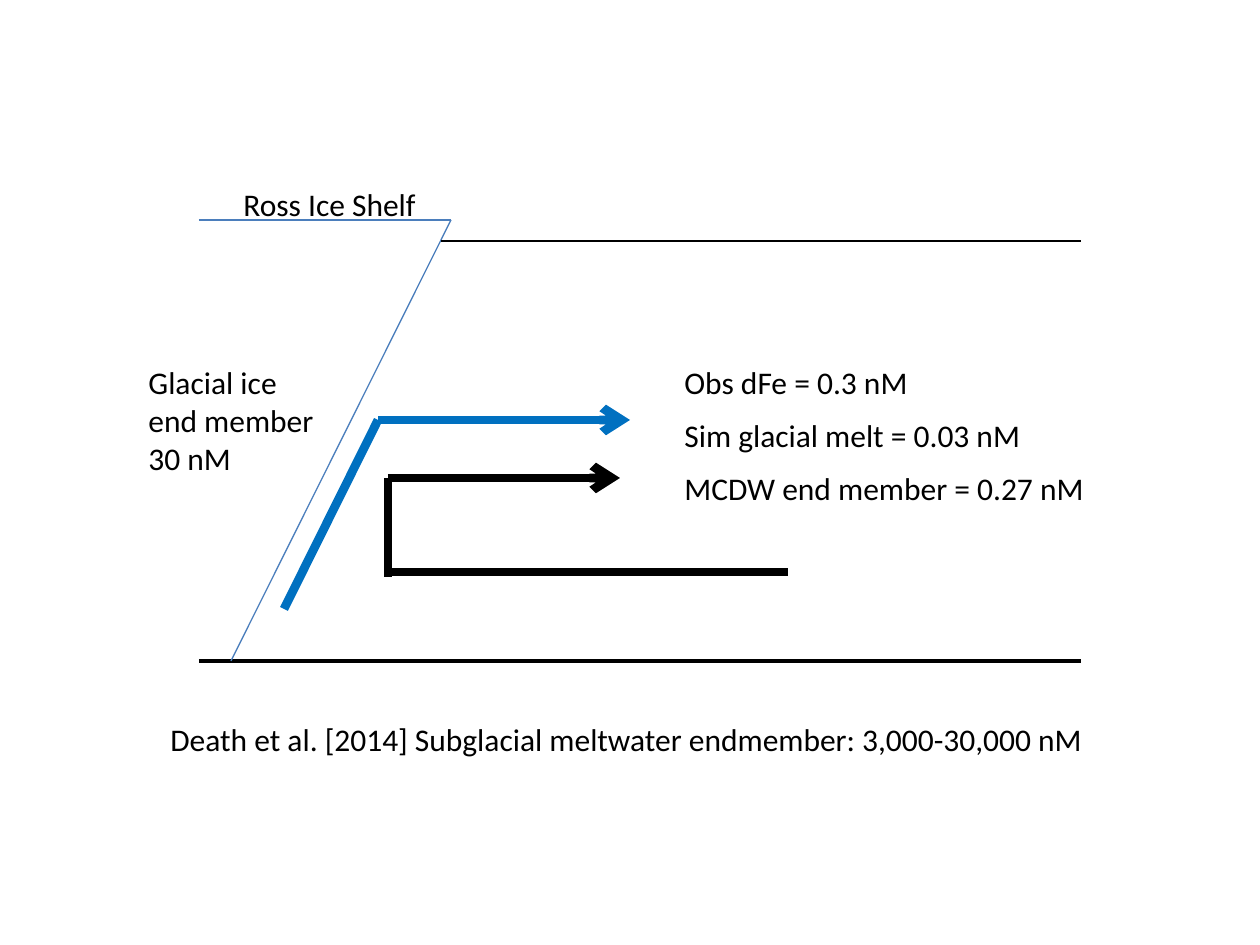
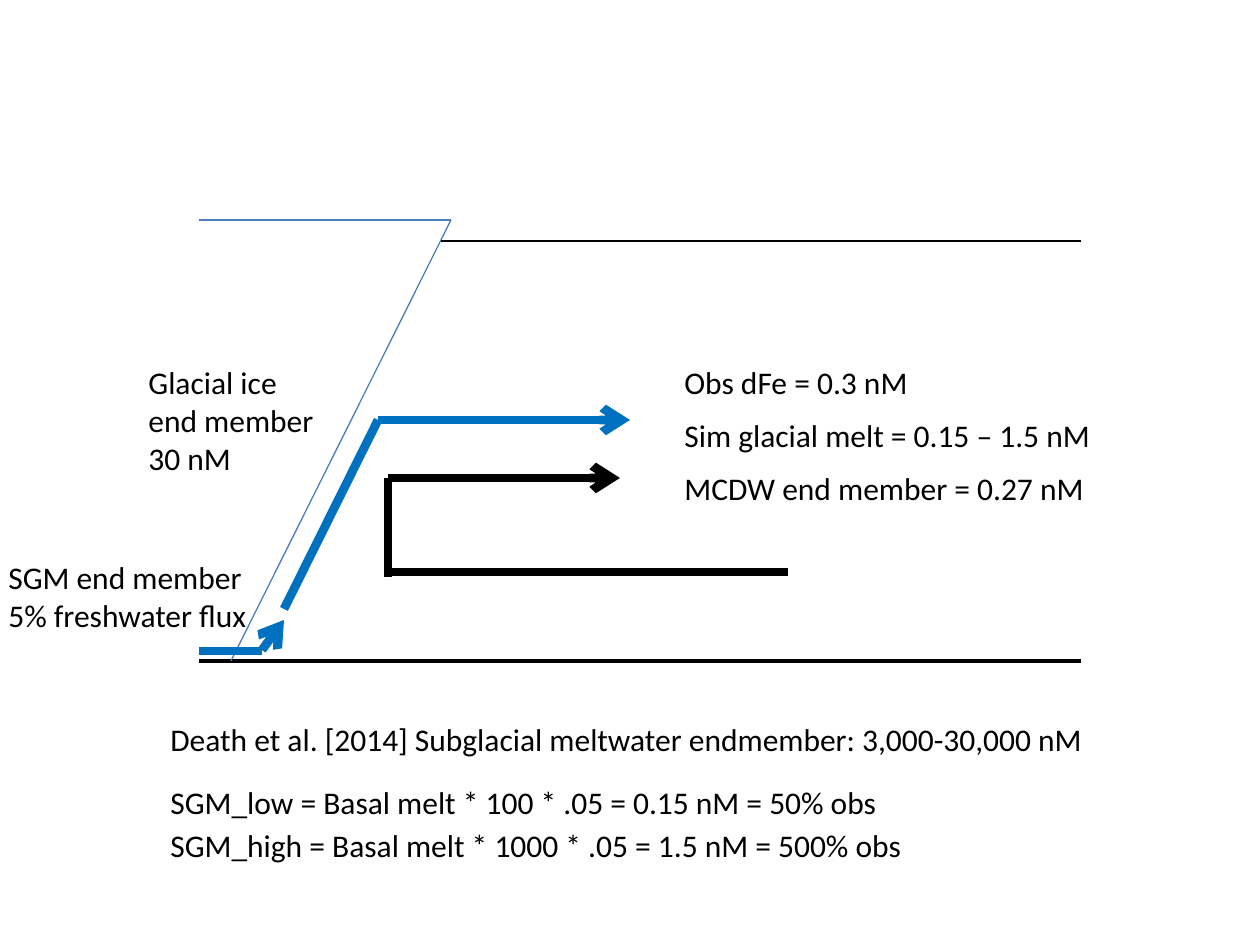
from pptx import Presentation
from pptx.dml.color import RGBColor
from pptx.enum.shapes import MSO_CONNECTOR
from pptx.enum.text import MSO_AUTO_SIZE
from pptx.oxml.ns import qn
from pptx.util import Pt
from lxml.etree import SubElement

PX = 914400 / 126
BLACK, ICE, MELT = "000000", "4B7EBC", "0070C0"
FONT = {"name": "Calibri", "size": Pt(18)}
THIN, BED, FLOW = 0.75, 2, 5
LINE_H, PAD = 38, 13
READING_X, READING_Y, READING_W, READING_STEP = 672, 357, (252, 365, 430), 53

SHARED_LINES = [
    ((199, 661), (1081, 661), BLACK, BED, False),
    ((231, 661), (451, 220), ICE, THIN, False),
    ((199, 220), (451, 220), ICE, THIN, False),
    ((441, 241), (1081, 241), BLACK, THIN, False),
    ((284, 609), (378, 420), MELT, FLOW, False),
    ((378, 420), (630, 420), MELT, FLOW, True),
    ((388, 572), (788, 572), BLACK, FLOW, False),
    ((388, 577), (388, 478), BLACK, FLOW, False),
    ((388, 478), (620, 478), BLACK, FLOW, True),
]
SHARED_LABELS = [
    (136, 357, 193, ["Glacial ice", "end member", "30 nM"]),
    (158, 714, 940, ["Death et al. [2014] Subglacial meltwater endmember: 3,000-30,000 nM"]),
]
SLIDES = [
    {
        "melt": "0.03 nM",
        "melt_width": 365,
        "lines": [],
        "labels": [(231, 179, 200, ["Ross Ice Shelf"])],
    },
    {
        "melt": "0.15 – 1.5 nM",
        "melt_width": 436,
        "lines": [
            ((262, 650), (284, 620), MELT, FLOW, True),
            ((199, 651), (262, 651), MELT, FLOW, False),
        ],
        "labels": [
            (-4, 552, 266, ["SGM end member", "5% freshwater flux"]),
            (158, 777, 741, ["SGM_low = Basal melt * 100 * .05 = 0.15 nM = 50% obs"]),
            (158, 820, 759, ["SGM_high = Basal melt * 1000 * .05 = 1.5 nM = 500% obs"]),
        ],
    },
]


def px(n):
    return round(n * PX)


def color(value):
    return RGBColor.from_string(value)


def add_line(s, start, end, hue, width, arrow):
    sp = s.shapes.add_connector(MSO_CONNECTOR.STRAIGHT, *map(px, start + end))
    sp.line.color.rgb = color(hue)
    sp.line.width = Pt(width)
    props = sp._element.spPr
    if arrow:
        SubElement(props.find(qn("a:ln")), qn("a:tailEnd"), type="arrow")
    SubElement(props, qn("a:effectLst"))


def add_label(s, x, y, width, lines):
    height = PAD + LINE_H * len(lines)
    tf = s.shapes.add_textbox(*map(px, (x, y, width, height))).text_frame
    tf.word_wrap = False
    tf.auto_size = MSO_AUTO_SIZE.SHAPE_TO_FIT_TEXT
    for i, text in enumerate(lines):
        p = tf.add_paragraph() if i else tf.paragraphs[0]
        r = p.add_run()
        r.text = text
        for key, value in FONT.items():
            setattr(r.font, key, value)
        r.font.color.rgb = color(BLACK)


def readings(melt, melt_width):
    rows = [
        ("Obs dFe = 0.3 nM", 252),
        (f"Sim glacial melt = {melt}", melt_width),
        ("MCDW end member = 0.27 nM", 430),
    ]
    return [(READING_X, READING_Y + i * READING_STEP, width, [text])
            for i, (text, width) in enumerate(rows)]


def main():
    prs = Presentation()
    prs.slide_width, prs.slide_height = px(1260), px(945)
    for content in SLIDES:
        s = prs.slides.add_slide(prs.slide_layouts[6])
        for line in SHARED_LINES + content["lines"]:
            add_line(s, *line)
        values = readings(content["melt"], content["melt_width"])
        for label in SHARED_LABELS + values + content["labels"]:
            add_label(s, *label)
    prs.save("out.pptx")


if __name__ == "__main__":
    main()
